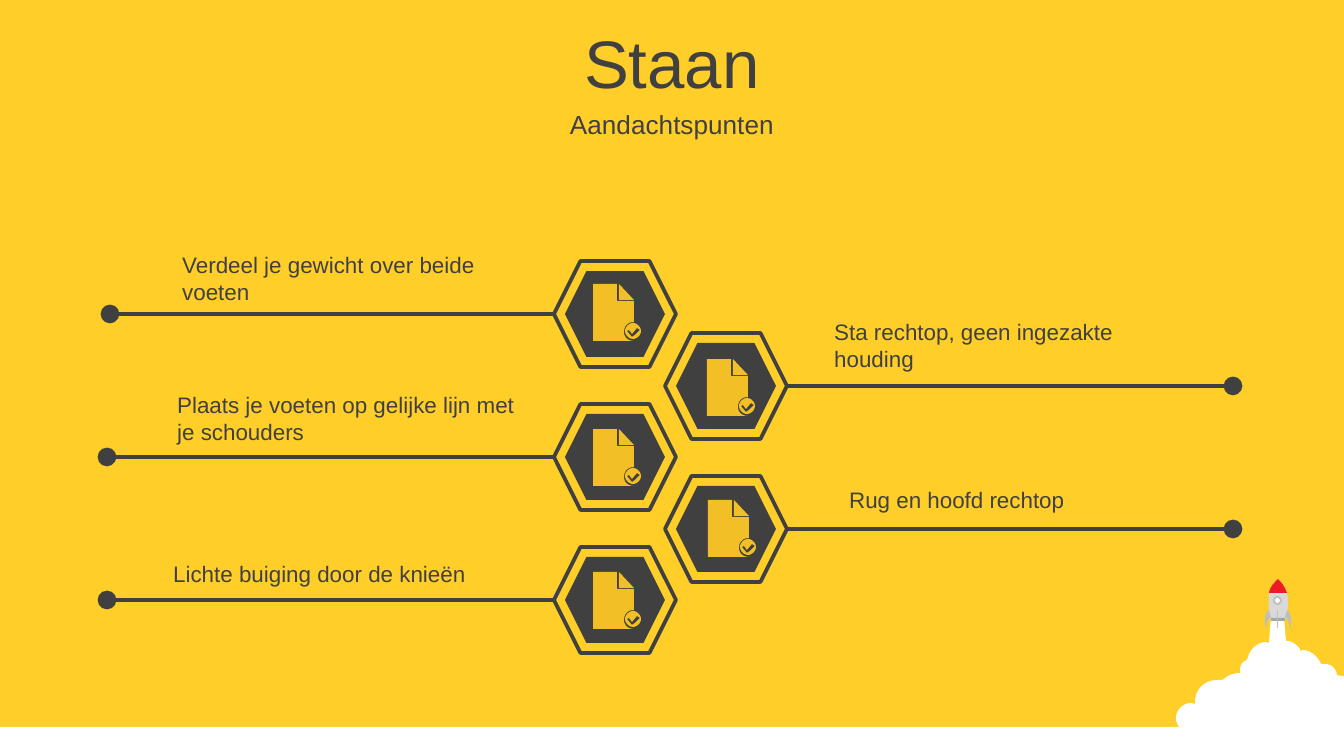
"""Build the "Staan" slide: five points of attention around a hexagon column."""
from dataclasses import dataclass

from lxml import etree
from pptx import Presentation
from pptx.dml.color import RGBColor
from pptx.enum.shapes import MSO_CONNECTOR, MSO_SHAPE
from pptx.enum.text import MSO_ANCHOR, PP_ALIGN
from pptx.oxml.ns import qn
from pptx.util import Pt

RECTANGLE, ELLIPSE, HEXAGON = MSO_SHAPE.RECTANGLE, MSO_SHAPE.OVAL, MSO_SHAPE.HEXAGON
STRAIGHT = MSO_CONNECTOR.STRAIGHT
LEFT, CENTER, RIGHT = PP_ALIGN.LEFT, PP_ALIGN.CENTER, PP_ALIGN.RIGHT
TOP, MIDDLE = MSO_ANCHOR.TOP, MSO_ANCHOR.MIDDLE

EMU_PER_PX = 914400 / 134.4
PAGE_WIDTH, PAGE_HEIGHT = 1344, 756
CURVE_STEPS = 8
FIRST_ROW, ROW_PAIR = 314, 143
COLUMN_CENTERS = {LEFT: 615, RIGHT: 726}
OUTER_HEXAGON, INNER_HEXAGON = (122, 106), (100, 86)
ROCKET_AXIS = 1278


@dataclass(frozen=True)
class Theme:
    """Colours, font and type sizes."""

    yellow: str = "FFCE29"
    icon: str = "F2BF27"
    dark: str = "404040"
    white: str = "FFFFFF"
    hull: str = "D9D9D9"
    fin: str = "BFBFBF"
    stripe: str = "A6A6A6"
    nose: str = "ED1C24"
    font: str = "Arial"
    title: int = 36
    subtitle: int = 14
    body: int = 12


@dataclass(frozen=True)
class Point:
    """One point of attention with its text box, line end and icon position."""

    text: str
    side: int
    box: tuple
    line_end: int
    icon: tuple
    align: int = LEFT


THEME = Theme()

POINTS = [
    Point("Verdeel je gewicht over beide voeten", LEFT, (169, 245, 380, 67), 110, (593, 284)),
    Point("Sta rechtop, geen ingezakte houding", RIGHT, (821, 312, 380, 67), 1233, (707, 359)),
    Point("Plaats je voeten op gelijke lijn met je schouders", LEFT, (164, 385, 380, 67), 107, (593, 429)),
    Point("Rug en hoofd rechtop", RIGHT, (836, 480, 380, 40), 1233, (708, 500)),
    Point("Lichte buiging door de knieën", LEFT, (99, 554, 380, 40), 107, (593, 572), RIGHT),
]

CLOUD = [
    (1271, 617), (1284, 617), (1286, 641), (1289, 641), (1293, 642, 1297, 645, 1300, 649),
    (1301, 652), (1302, 650), (1310, 650, 1318, 656, 1321, 664), (1325, 664),
    (1331, 664, 1336, 668, 1337, 675), (1341, 676), (1344, 676), (1344, 753), (1255, 754),
    (1240, 754, 1232, 748, 1227, 741), (1224, 743, 1219, 745, 1215, 743),
    (1210, 742, 1202, 739, 1200, 732), (1199, 731), (1198, 732, 1195, 733, 1191, 733),
    (1183, 733, 1176, 726, 1176, 718), (1176, 710, 1183, 703, 1191, 703), (1195, 704),
    (1195, 702), (1195, 690, 1204, 680, 1217, 680), (1222, 680), (1224, 679),
    (1228, 675, 1234, 673, 1240, 673), (1240, 670), (1240, 665, 1243, 661, 1247, 660),
    (1248, 657), (1250, 649, 1258, 642, 1266, 642), (1269, 643),
]
HULL = [(1271, 621), (1269, 609, 1264, 591, 1278, 579), (1293, 593, 1288, 610, 1285, 621)]
NOSE = [(1278, 579), (1282, 583, 1285, 587, 1287, 593), (1269, 593), (1270, 587, 1274, 583, 1278, 579)]
FIN = [(1269, 610), (1271, 617), (1266, 620, 1267, 626, 1266, 629), (1265, 625, 1263, 614, 1269, 610)]
DOCUMENT_ICON = [
    [(44, 44), (39, 50), (36, 46), (34, 47), (39, 53), (42, 51), (47, 46)],
    [(40, 39), (44, 39, 48, 43, 48, 47), (48, 51, 44, 55, 40, 55),
     (36, 55, 32, 51, 32, 47), (32, 43, 36, 39, 40, 39)],
    [(0, 0), (24, 0), (24, 17), (41, 17), (41, 38), (35, 38, 31, 42, 31, 48),
     (31, 53, 35, 57, 41, 57), (0, 57)],
    [(26, 0), (41, 16), (26, 16)],
]


def px(length):
    """Turn px into EMU."""
    return round(length * EMU_PER_PX)


def color(value):
    """Turn a hex string into a colour."""
    return RGBColor.from_string(value)


def paint(shape, fill, line=None, weight=1):
    """Give a shape its fill and outline, without a shadow."""
    shape.shadow.inherit = False
    shape.fill.solid()
    shape.fill.fore_color.rgb = color(fill)
    if line:
        shape.line.color.rgb = color(line)
        shape.line.width = Pt(weight)
    else:
        shape.line.fill.background()


def add_preset(page, kind, box, fill, line=None, weight=1):
    """Add a preset shape."""
    paint(page.shapes.add_shape(kind, *map(px, box)), fill, line, weight)


def flatten(contour):
    """Turn a contour of lines and cubic curves into points."""
    points = []
    for segment in contour:
        if len(segment) == 2:
            points.append(segment)
            continue
        controls = [points[-1], segment[:2], segment[2:4], segment[4:]]
        for step in range(1, CURVE_STEPS + 1):
            t = step / CURVE_STEPS
            weights = ((1 - t) ** 3, 3 * t * (1 - t) ** 2, 3 * t * t * (1 - t), t ** 3)
            points.append(tuple(sum(w * c[axis] for w, c in zip(weights, controls)) for axis in (0, 1)))
    return points


def add_outline(page, contours, fill, origin=(0, 0)):
    """Add a filled freeform made of one or more contours."""
    builder = None
    for contour in contours:
        start, *rest = [(px(x + origin[0]), px(y + origin[1])) for x, y in flatten(contour)]
        if builder is None:
            builder = page.shapes.build_freeform(*start)
        else:
            builder.move_to(*start)
        builder.add_line_segments(rest, close=True)
    paint(builder.convert_to_shape(), fill)


def add_text(page, text, box, size, align=LEFT, anchor=TOP, space_before=0):
    """Add a one-paragraph text box."""
    frame = page.shapes.add_textbox(*map(px, box)).text_frame
    frame.word_wrap = True
    frame.vertical_anchor = anchor
    para = frame.paragraphs[0]
    para.text = text
    para.alignment = align
    para.space_before = Pt(space_before)
    para.font.name = THEME.font
    para.font.size = Pt(size)
    para.font.color.rgb = color(THEME.dark)


def add_dotted_line(page, start, end, y):
    """Add a horizontal line that ends in a dot."""
    connector = page.shapes.add_connector(STRAIGHT, px(start), px(y), px(end), px(y))
    connector.line.color.rgb = color(THEME.dark)
    connector.line.width = Pt(2)
    etree.SubElement(connector.line._get_or_add_ln(), qn("a:tailEnd"), type="oval", w="lg", len="lg")
    etree.SubElement(connector._element.spPr, qn("a:effectLst"))


def add_hexagon(page, center, y, size, fill, line=None):
    """Add a hexagon around a centre."""
    width, height = size
    add_preset(page, HEXAGON, (center - width // 2, y - height // 2, width, height), fill, line, 2)


def add_point(page, point, y):
    """Add a point of attention with its hexagon, line, text and icon."""
    center = COLUMN_CENTERS[point.side]
    add_hexagon(page, center, y, OUTER_HEXAGON, THEME.yellow, THEME.dark)
    add_hexagon(page, center, y, INNER_HEXAGON, THEME.dark)
    reach = OUTER_HEXAGON[0] // 2
    add_dotted_line(page, center + (reach if point.side == RIGHT else -reach), point.line_end, y)
    add_text(page, point.text, point.box, THEME.body, point.align)
    add_outline(page, DOCUMENT_ICON, THEME.icon, point.icon)


def add_rocket(page):
    """Add the rocket that rises from its cloud."""
    add_outline(page, [CLOUD], THEME.white)
    add_outline(page, [HULL], THEME.hull)
    add_preset(page, RECTANGLE, (1271, 618, 14, 3), THEME.stripe)
    add_outline(page, [NOSE], THEME.nose)
    add_preset(page, ELLIPSE, (1274, 597, 7, 7), THEME.white, THEME.fin)
    add_preset(page, RECTANGLE, (1277, 611, 1, 17), THEME.fin)
    mirrored = [tuple(v if i % 2 else 2 * ROCKET_AXIS - v for i, v in enumerate(part)) for part in FIN]
    for fin in (FIN, mirrored):
        add_outline(page, [fin], THEME.fin)


def main():
    """Build and save the deck."""
    deck = Presentation()
    deck.slide_width, deck.slide_height = px(PAGE_WIDTH), px(PAGE_HEIGHT)
    page = deck.slides.add_slide(deck.slide_layouts[6])
    page.background.fill.solid()
    page.background.fill.fore_color.rgb = color(THEME.yellow)
    add_preset(page, RECTANGLE, (0, 727, PAGE_WIDTH, 29), THEME.white)
    add_rocket(page)
    add_text(page, "Staan", (0, 19, PAGE_WIDTH, 85), THEME.title, CENTER, MIDDLE, 4)
    add_text(page, "Aandachtspunten", (0, 103, PAGE_WIDTH, 42), THEME.subtitle, CENTER, MIDDLE, 2)
    for row, point in enumerate(POINTS):
        add_point(page, point, FIRST_ROW + (ROW_PAIR * row + 1) // 2)
    deck.save("out.pptx")


if __name__ == "__main__":
    main()
